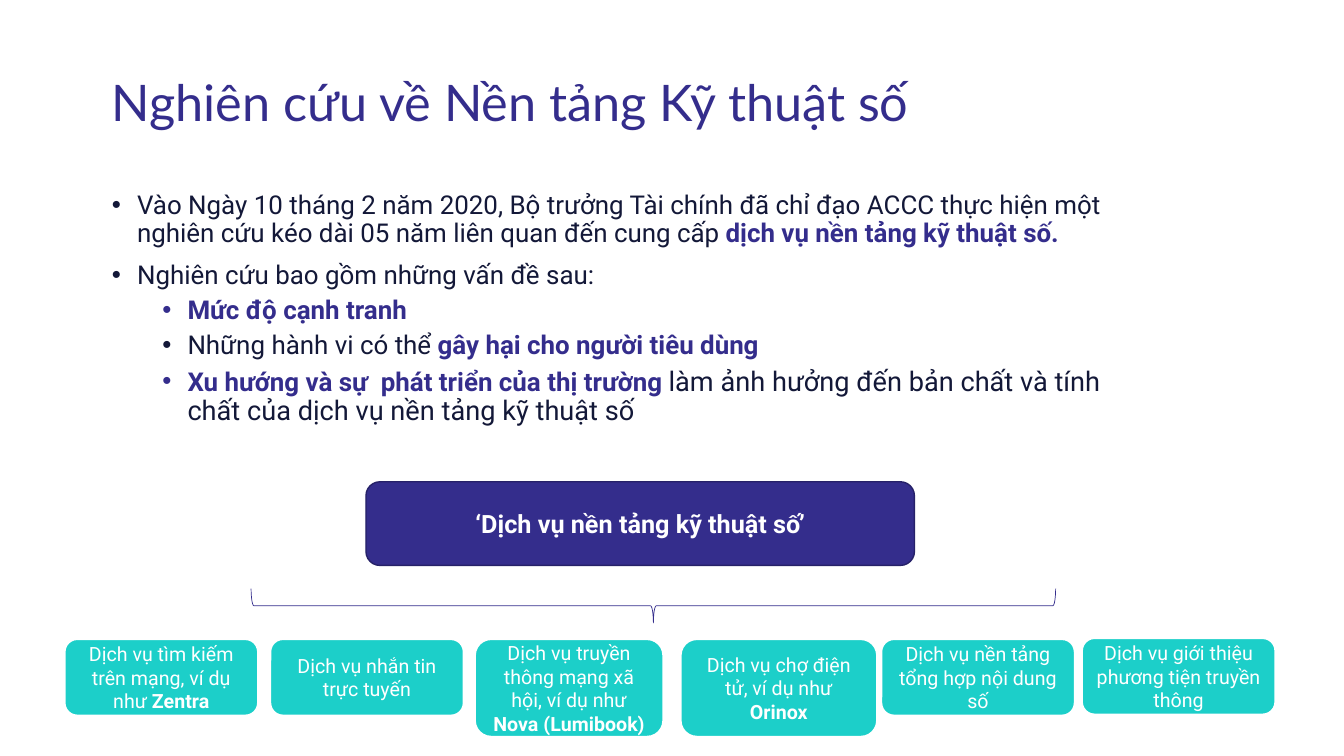
from lxml import etree
from pptx import Presentation
from pptx.dml.color import RGBColor
from pptx.enum.shapes import MSO_SHAPE
from pptx.enum.text import MSO_ANCHOR, PP_ALIGN
from pptx.oxml.ns import qn
from pptx.util import Inches, Pt

ROUND = MSO_SHAPE.ROUNDED_RECTANGLE
BRACE = MSO_SHAPE.RIGHT_BRACE
MIDDLE = MSO_ANCHOR.MIDDLE
TOP = MSO_ANCHOR.TOP
CENTER = PP_ALIGN.CENTER

COLORS = {
    "violet": "342D8C",
    "edge": "262168",
    "ink": "131838",
    "teal": "1CCFC9",
    "white": "FFFFFF",
}

POINTS = [
    (0, 18.5, [
        ("Vào Ngày 10 tháng 2 năm 2020, Bộ trưởng Tài chính đã chỉ đạo ACCC thực hiện một "
         "nghiên cứu kéo dài 05 năm liên quan đến cung cấp ", False),
        ("dịch vụ nền tảng kỹ thuật số.", True)]),
    (0, 18.5, [("Nghiên cứu bao gồm những vấn đề sau:", False)]),
    (1, 18.5, [("Mức độ cạnh tranh", True)]),
    (1, 18.5, [("Những hành vi có thể ", False), ("gây hại cho người tiêu dùng", True)]),
    (1, 19.4, [
        ("Xu hướng và sự  phát triển của thị trường ", True),
        ("làm ảnh hưởng đến bản chất và tính chất của dịch vụ nền tảng kỹ thuật số", False)]),
]

SERVICES = [
    (0.64, 6.34, 1.92, 0.76, "Dịch vụ tìm kiếm trên mạng, ví dụ như ", "Zentra"),
    (2.68, 6.34, 1.92, 0.76, "Dịch vụ nhắn tin trực tuyến", ""),
    (4.71, 6.34, 1.87, 0.97, "Dịch vụ truyền thông mạng xã hội, ví dụ như ", "Nova (Lumibook)"),
    (6.75, 6.34, 1.95, 0.97, "Dịch vụ chợ điện tử, ví dụ như ", "Orinox"),
    (8.74, 6.34, 1.92, 0.76, "Dịch vụ nền tảng tổng hợp nội dung số", ""),
    (10.73, 6.33, 1.92, 0.76, "Dịch vụ giới thiệu phương tiện truyền thông", ""),
]


def color(name):
    return RGBColor.from_string(COLORS[name])


def add_run(para, text, size, shade, bold=False, face="Roboto"):
    run = para.add_run()
    run.text = text
    run.font.size = Pt(size)
    run.font.name = face
    run.font.bold = bold
    run.font.color.rgb = color(shade)


def add_frame(slide, box, anchor):
    frame = slide.shapes.add_textbox(*map(Inches, box)).text_frame
    frame.word_wrap = True
    frame.vertical_anchor = anchor
    frame.margin_left = frame.margin_right = 0
    frame.margin_top = frame.margin_bottom = 0
    return frame


def add_title(slide, text):
    para = add_frame(slide, (1.11, 0.53, 10.74, 1.03), MIDDLE).paragraphs[0]
    para.line_spacing = 0.9
    add_run(para, text, 36, "violet", face="Lato")


def set_bullet(para, level):
    props = para._p.get_or_add_pPr()
    props.set("marL", str(Inches(0.25 + 0.5 * level)))
    props.set("indent", str(Inches(-0.25)))
    etree.SubElement(props, qn("a:buFont")).set("typeface", "Arial")
    etree.SubElement(props, qn("a:buChar")).set("char", "•")


def add_points(slide):
    frame = add_frame(slide, (1.11, 1.91, 10.28, 2.49), TOP)
    for index, (level, last, parts) in enumerate(POINTS):
        para = frame.add_paragraph() if index else frame.paragraphs[0]
        para.level = level
        para.line_spacing = 0.9
        para.space_before = Pt(5 if level else 10)
        set_bullet(para, level)
        for order, (text, strong) in enumerate(parts):
            size = last if order == len(parts) - 1 else 18.5
            add_run(para, text, size, "violet" if strong else "ink", strong)


def add_box(slide, box, fill, line, width, size, parts):
    shape = slide.shapes.add_shape(ROUND, *map(Inches, box))
    shape.shadow.inherit = False
    shape.fill.solid()
    shape.fill.fore_color.rgb = color(fill)
    shape.line.color.rgb = color(line)
    shape.line.width = Pt(width)
    frame = shape.text_frame
    frame.word_wrap = True
    frame.vertical_anchor = MIDDLE
    para = frame.paragraphs[0]
    para.alignment = CENTER
    for text, bold in parts:
        if text:
            add_run(para, text, size, "white", bold)


def add_brace(slide):
    brace = slide.shapes.add_shape(BRACE, *map(Inches, (6.31, 2.02, 0.34, 7.98)))
    brace.rotation = 90
    brace.shadow.inherit = False
    brace.fill.background()
    brace.line.color.rgb = color("violet")
    brace.line.width = Pt(0.5)


def main():
    deck = Presentation()
    deck.slide_width = Inches(13.33)
    deck.slide_height = Inches(7.5)
    slide = deck.slides.add_slide(deck.slide_layouts[6])
    add_title(slide, "Nghiên cứu về Nền tảng Kỹ thuật số")
    add_points(slide)
    add_box(slide, (3.63, 4.78, 5.44, 0.83), "violet", "edge", 1, 18,
            [("‘Dịch vụ nền tảng kỹ thuật số’", True)])
    for *box, text, name in SERVICES:
        add_box(slide, box, "teal", "white", 1.5, 14, [(text, False), (name, True)])
    add_brace(slide)
    deck.save("out.pptx")


if __name__ == "__main__":
    main()
